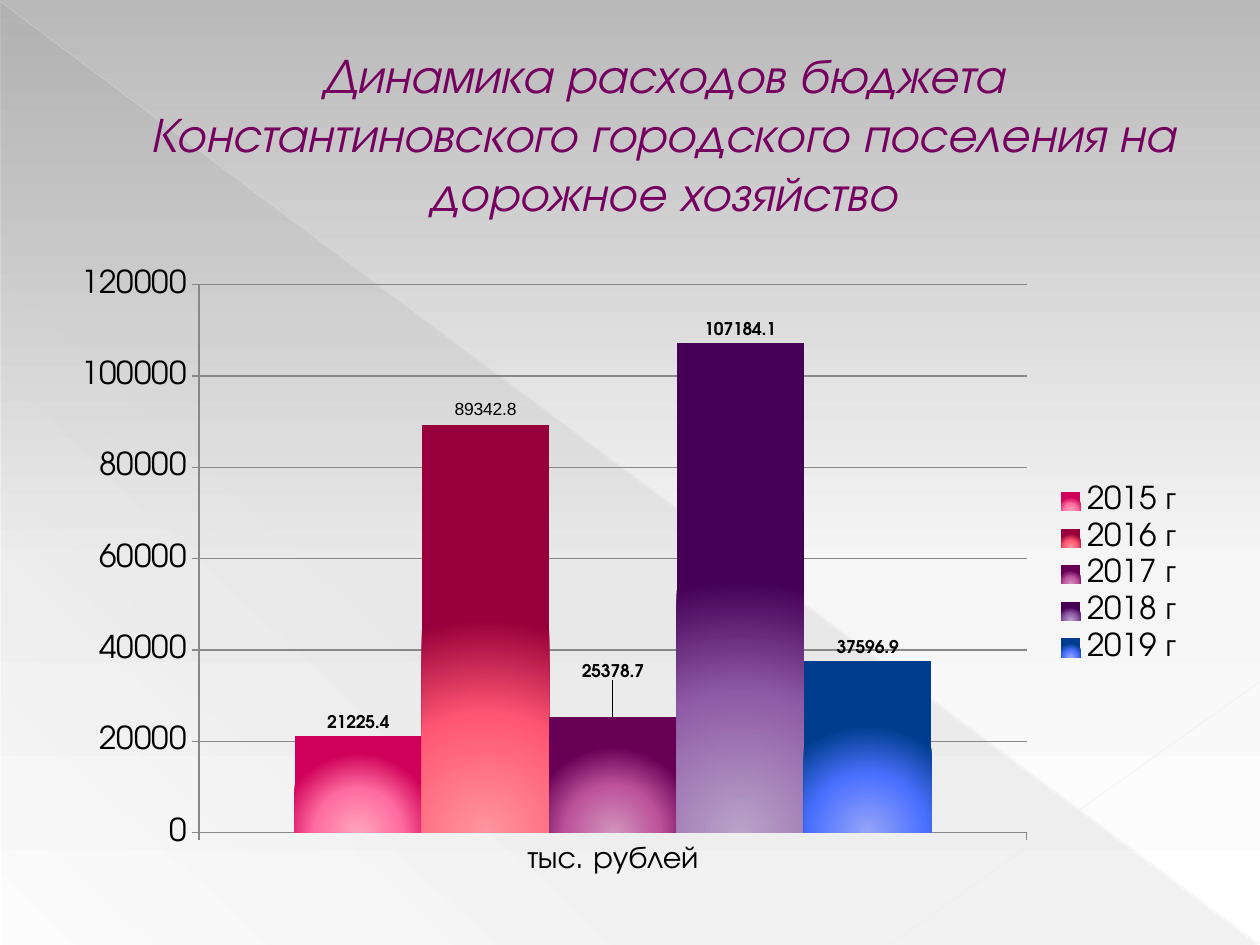
import lxml.etree
import pptx
import pptx.chart.data
import pptx.dml.color
import pptx.enum.chart
import pptx.enum.shapes
import pptx.enum.text
import pptx.oxml
import pptx.oxml.ns
import pptx.util
from pptx.util import Inches

FONT = "TeX Gyre Adventor"
COLORS = {
    "title": "75005F",
    "title_outline": "B12761",
    "text": "000000",
    "grid": "888888",
    "facet": "666666",
    "diagonal": "E8E8E8",
    "corner": "EAEAEA",
}
BACKDROP = [(0, "B9B9B9", 100), (60, "F6F6F6", 100), (100, "FFFFFF", 100)]
YEARS = [
    ("2015 г", 21225.4, ("FFA5C0", "FF6C9F", "CF0059")),
    ("2016 г", 89342.8, ("FF959E", "FF5673", "97003A")),
    ("2017 г", 25378.7, ("D195BD", "BD529B", "670054")),
    ("2018 г", 107184.1, ("B9A3C9", "8F5BA6", "450055")),
    ("2019 г", 37596.9, ("95A5F8", "4A70FF", "003D8E")),
]
RADIAL = '<a:path path="circle"><a:fillToRect l="50000" t="100000" r="50000"/></a:path>'


def rgb(name):
    return pptx.dml.color.RGBColor.from_string(COLORS[name])


def linear(angle):
    return f'<a:lin ang="{angle * 60000}" scaled="0"/>'


def apply_gradient(fill, owner, stops, direction):
    fill.solid()
    solid = owner.find(".//" + pptx.oxml.ns.qn("a:solidFill"))
    stop_xml = "".join(
        f'<a:gs pos="{position * 1000}"><a:srgbClr val="{color}">'
        f'<a:alpha val="{opacity * 1000}"/></a:srgbClr></a:gs>'
        for position, color, opacity in stops
    )
    gradient = pptx.oxml.parse_xml(
        f'<a:gradFill {pptx.oxml.ns.nsdecls("a")} rotWithShape="1">'
        f"<a:gsLst>{stop_xml}</a:gsLst>{direction}</a:gradFill>"
    )
    solid.getparent().replace(solid, gradient)


def add_facet(slide):
    facet = slide.shapes.add_shape(
        pptx.enum.shapes.MSO_SHAPE.RIGHT_TRIANGLE,
        Inches(0.01), Inches(0.02), Inches(9.98), Inches(7.48),
    )
    facet.shadow.inherit = False
    facet.line.fill.background()
    stops = [(position, COLORS["facet"], opacity)
             for position, opacity in ((0, 10), (70, 8), (100, 1))]
    apply_gradient(facet.fill, facet.element.spPr, stops, linear(133))


def add_ray(slide, start, end, color, width, opacity):
    ray = slide.shapes.add_connector(
        pptx.enum.shapes.MSO_CONNECTOR.STRAIGHT, *map(Inches, start + end))
    ray.line.color.rgb = rgb(color)
    ray.line.width = pptx.util.Pt(width)
    properties = ray.element.spPr
    tint = properties.find(".//" + pptx.oxml.ns.qn("a:srgbClr"))
    lxml.etree.SubElement(tint, pptx.oxml.ns.qn("a:alpha"), val=str(opacity * 1000))
    lxml.etree.SubElement(properties, pptx.oxml.ns.qn("a:effectLst"))


def fill_title(slide):
    heading = slide.shapes.title
    slide.shapes.element.append(heading.element)
    heading.left, heading.top = Inches(0.5), Inches(0.29)
    heading.width, heading.height = Inches(9), Inches(1.53)
    frame = heading.text_frame
    frame.text = "Динамика расходов бюджета Константиновского городского поселения на дорожное хозяйство"
    frame.word_wrap = True
    frame.auto_size = pptx.enum.text.MSO_AUTO_SIZE.NONE
    frame.vertical_anchor = pptx.enum.text.MSO_ANCHOR.MIDDLE
    paragraph = frame.paragraphs[0]
    paragraph.alignment = pptx.enum.text.PP_ALIGN.CENTER
    style_font(paragraph.font, 28, "title")
    paragraph.font.italic = True
    indents = paragraph.font._element.getparent()
    indents.set("marL", str(Inches(0.53)))
    indents.set("indent", "0")
    outline = pptx.oxml.parse_xml(
        f'<a:ln {pptx.oxml.ns.nsdecls("a")} w="6350"><a:solidFill>'
        f'<a:srgbClr val="{COLORS["title_outline"]}"/></a:solidFill></a:ln>'
    )
    paragraph.runs[0].font._element.insert(0, outline)


def style_font(font, size, color="text", name=FONT, bold=False):
    font.size = pptx.util.Pt(size)
    font.name = name
    font.bold = bold
    font.color.rgb = rgb(color)


def style_axis(axis):
    style_font(axis.tick_labels.font, 18)
    axis.format.line.color.rgb = rgb("grid")
    axis.major_tick_mark = pptx.enum.chart.XL_TICK_MARK.OUTSIDE


def manual_layout(**settings):
    entries = "".join(f'<c:{key} val="{value}"/>' for key, value in settings.items())
    return pptx.oxml.parse_xml(
        f'<c:layout {pptx.oxml.ns.nsdecls("c")}><c:manualLayout>{entries}'
        "</c:manualLayout></c:layout>"
    )


def style_point_label(series, name, bold):
    label = series.points[0].data_label
    style_font(label.font, 10, name=name, bold=bold)
    return label


def style_year(series, tones):
    stops = [(position, tone, 100) for position, tone in zip((0, 55, 100), tones)]
    apply_gradient(series.format.fill, series._element, stops, RADIAL)
    series.invert_if_negative = False
    labels = series.data_labels
    labels.show_value = True
    labels.position = pptx.enum.chart.XL_LABEL_POSITION.OUTSIDE_END
    style_font(labels.font, 10, bold=True)


def add_spending_chart(slide):
    spending = pptx.chart.data.CategoryChartData(number_format="General")
    spending.categories = ["тыс. рублей"]
    for year, amount, _ in YEARS:
        spending.add_series(year, [amount])
    chart = slide.shapes.add_chart(
        pptx.enum.chart.XL_CHART_TYPE.COLUMN_CLUSTERED,
        Inches(0.5), Inches(2.06), Inches(9), Inches(5), spending,
    ).chart
    style_font(chart.font, 18)
    chart.has_title = False
    chart.has_legend = True
    chart.legend.position = pptx.enum.chart.XL_LEGEND_POSITION.RIGHT
    chart.legend.include_in_layout = False
    style_font(chart.legend.font, 18)
    style_axis(chart.category_axis)
    style_axis(chart.value_axis)
    chart.value_axis.minimum_scale = 0
    chart.value_axis.maximum_scale = 120000
    chart.value_axis.major_unit = 20000
    chart.value_axis.major_gridlines.format.line.color.rgb = rgb("grid")

    plot = chart.plots[0]
    plot.vary_by_categories = False
    plot.gap_width = 150
    plot.overlap = 0
    for series, (_, _, tones) in zip(plot.series, YEARS):
        style_year(series, tones)
    style_point_label(plot.series[1], "Arial", False)
    style_point_label(plot.series[2], FONT, True)
    raised = plot.series[2]._element.find(".//" + pptx.oxml.ns.qn("c:dLbl"))
    raised.insert(1, manual_layout(x=0, y=-0.05))

    area = chart.element.find(".//" + pptx.oxml.ns.qn("c:plotArea"))
    for automatic in area.findall(pptx.oxml.ns.qn("c:layout")):
        area.remove(automatic)
    area.insert(0, manual_layout(
        layoutTarget="inner", xMode="edge", yMode="edge", x=0.12, y=0.04, w=0.73, h=0.87))


def main():
    deck = pptx.Presentation()
    deck.slide_width, deck.slide_height = Inches(10), Inches(7.5)
    slide = deck.slides.add_slide(deck.slide_layouts[5])
    apply_gradient(slide.background.fill, slide.element, BACKDROP, linear(90))
    add_facet(slide)
    add_ray(slide, (0, 0.01), (9.99, 7.49), "diagonal", 0.39, 35)
    add_ray(slide, (10, 5.41), (7.07, 7.49), "corner", 0.47, 45)
    fill_title(slide)
    add_spending_chart(slide)
    deck.save("out.pptx")


if __name__ == "__main__":
    main()
